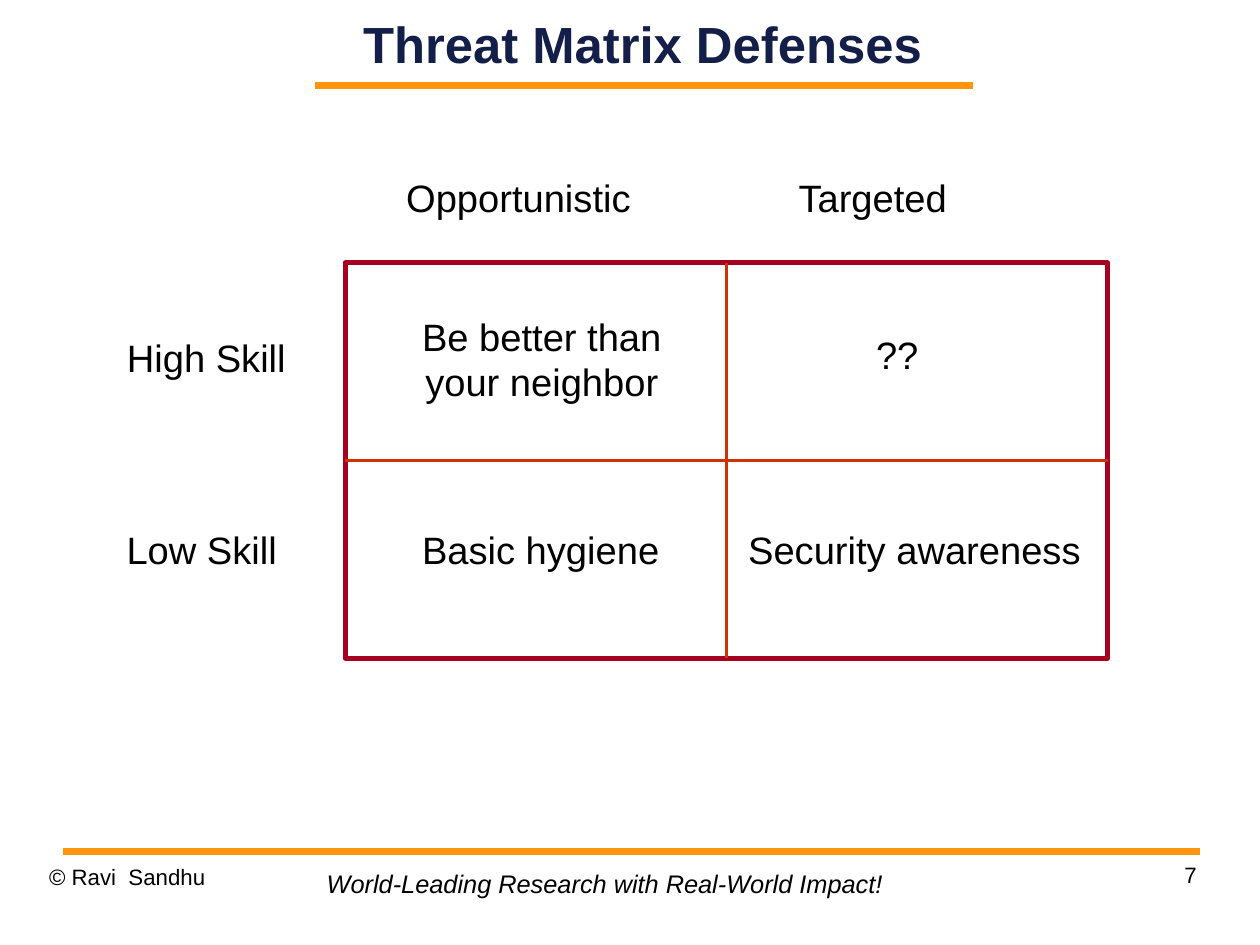
"""Build the Threat Matrix Defenses slide."""
import pptx
import pptx.dml.color
import pptx.enum.shapes
import pptx.enum.text
import pptx.oxml
import pptx.oxml.ns
import pptx.util

Inches = pptx.util.Inches
Pt = pptx.util.Pt
PP_ALIGN = pptx.enum.text.PP_ALIGN
COLORS = {"text": "000000", "title": "131F49", "rule": "FF950E",
          "frame": "A50021", "divider": "CC3300"}
MATRIX = (3.02, 2.3, 6.67, 3.46)
LABELS = [
    (1, 2.88, 1.61, 0.5, ["High Skill"]),
    (1, 4.56, 1.53, 0.5, ["Low Skill"]),
    (3.44, 1.48, 2.19, 0.5, ["Opportunistic"]),
    (6.88, 1.48, 1.51, 0.5, ["Targeted"]),
    (3.58, 4.56, 2.3, 0.5, ["Basic hygiene"]),
    (6.43, 4.56, 3.14, 0.5, ["Security awareness"]),
    (3.58, 2.69, 2.32, 0.91, ["Be better than", "your neighbor"]),
    (7.56, 2.85, 0.58, 0.5, ["??"]),
]


def rgb(name):
    return pptx.dml.color.RGBColor.from_string(COLORS[name])


def write(p, text, size, color="text", align=PP_ALIGN.LEFT, bold=False, italic=False):
    p.alignment = align
    r = p.add_run()
    r.text = text
    r.font.name = "Arial"
    r.font.size = Pt(size)
    r.font.bold = bold
    r.font.italic = italic
    r.font.color.rgb = rgb(color)


def clear_margins(tf):
    tf.margin_left = tf.margin_right = tf.margin_top = tf.margin_bottom = 0


def add_title(s, text):
    sp = s.shapes.title
    sp.left, sp.top = Inches(2.41), Inches(0)
    sp.width, sp.height = Inches(6.43), Inches(0.75)
    tf = sp.text_frame
    clear_margins(tf)
    tf.auto_size = pptx.enum.text.MSO_AUTO_SIZE.NONE
    tf.vertical_anchor = pptx.enum.text.MSO_ANCHOR.MIDDLE
    write(tf.paragraphs[0], text, 32, "title", PP_ALIGN.CENTER, bold=True)


def add_line(s, x1, y1, x2, y2, color, width):
    sp = s.shapes.add_connector(pptx.enum.shapes.MSO_CONNECTOR.STRAIGHT,
                                Inches(x1), Inches(y1), Inches(x2), Inches(y2))
    sp.line.color.rgb = rgb(color)
    sp.line.width = Pt(width)
    effects = pptx.oxml.parse_xml(f"<a:effectLst {pptx.oxml.ns.nsdecls('a')}/>")
    sp.element.spPr.append(effects)


def add_matrix(s):
    x, y, w, h = MATRIX
    sp = s.shapes.add_shape(pptx.enum.shapes.MSO_SHAPE.RECTANGLE,
                            Inches(x), Inches(y), Inches(w), Inches(h))
    sp.shadow.inherit = False
    sp.fill.background()
    sp.line.color.rgb = rgb("frame")
    sp.line.width = Pt(3)
    add_line(s, x, y + h / 2, x + w, y + h / 2, "divider", 1.5)
    add_line(s, x + w / 2, y, x + w / 2, y + h, "divider", 1.5)


def add_label(s, x, y, w, h, lines, size=24, align=PP_ALIGN.CENTER, italic=False):
    tf = s.shapes.add_textbox(Inches(x), Inches(y), Inches(w), Inches(h)).text_frame
    tf.word_wrap = False
    tf.auto_size = pptx.enum.text.MSO_AUTO_SIZE.SHAPE_TO_FIT_TEXT
    for i, line in enumerate(lines):
        p = tf.add_paragraph() if i else tf.paragraphs[0]
        write(p, line, size, align=align, italic=italic)


def add_footer(s, x, y, text, align):
    tf = s.shapes.add_textbox(Inches(x), Inches(y), Inches(2.57), Inches(0.57)).text_frame
    tf.word_wrap = True
    clear_margins(tf)
    p = tf.paragraphs[0]
    p.line_spacing = 1.01
    write(p, text, 14, align=align)


def main():
    prs = pptx.Presentation()
    prs.slide_width, prs.slide_height = Inches(28 / 2.54), Inches(21 / 2.54)
    s = prs.slides.add_slide(prs.slide_layouts[5])
    add_title(s, "Threat Matrix Defenses")
    add_line(s, 2.76, 0.75, 8.51, 0.75, "rule", 4.31)
    add_line(s, 0.55, 7.45, 10.5, 7.45, "rule", 4.31)
    add_footer(s, 0.43, 7.55, "© Ravi  Sandhu", PP_ALIGN.LEFT)
    add_footer(s, 7.9, 7.53, "7", PP_ALIGN.RIGHT)
    add_label(s, 2.76, 7.55, 5.08, 0.37, ["World-Leading Research with Real-World Impact!"],
              16, PP_ALIGN.LEFT, italic=True)
    add_matrix(s)
    for label in LABELS:
        add_label(s, *label)
    prs.save("out.pptx")


if __name__ == "__main__":
    main()
